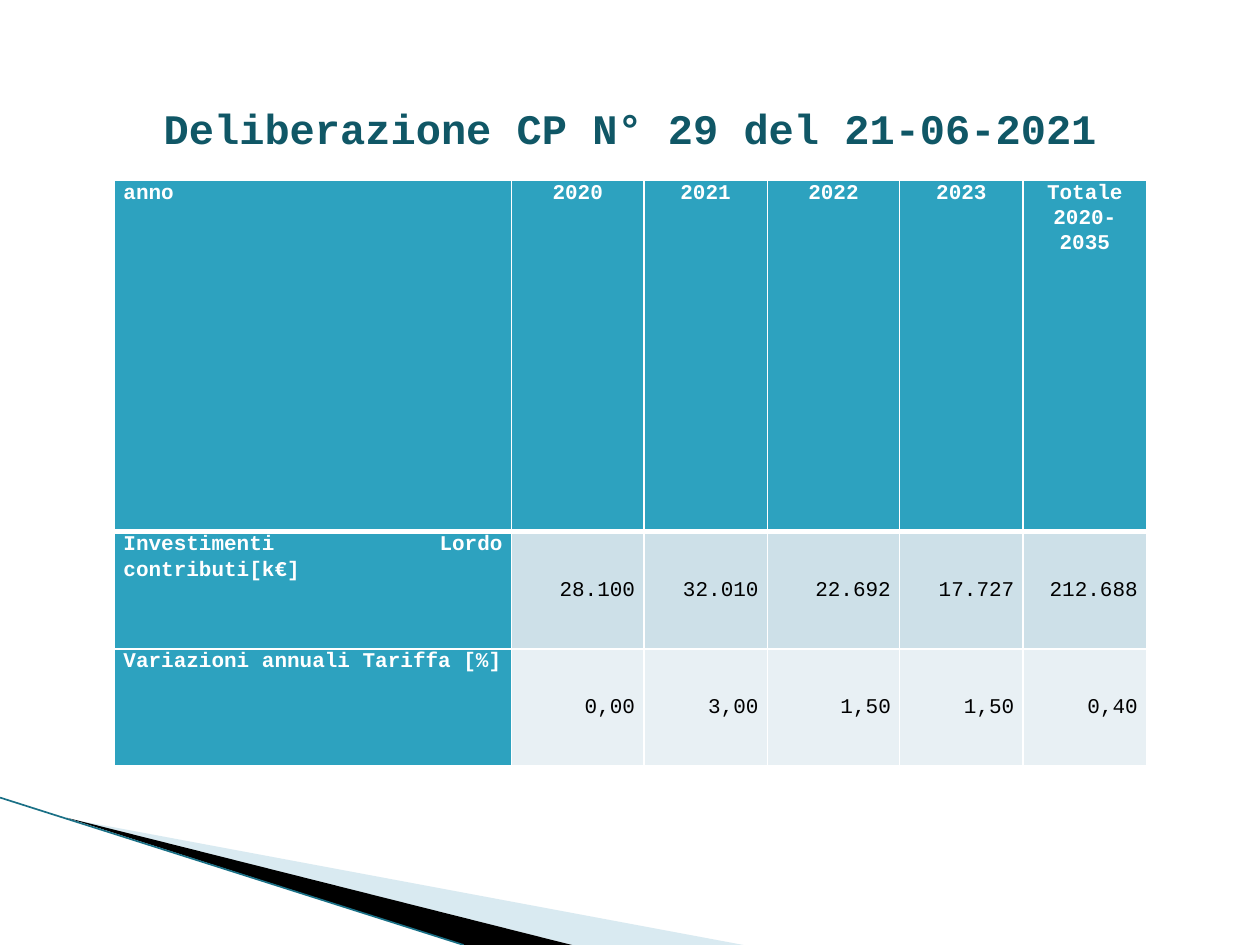
from lxml.etree import SubElement
from pptx import Presentation
from pptx.dml.color import RGBColor
from pptx.enum.shapes import MSO_CONNECTOR
from pptx.enum.text import MSO_ANCHOR as Anchor, PP_ALIGN as Align
from pptx.oxml.ns import qn
from pptx.util import Inches, Pt

FONT = "Courier New"
TITLE = "Deliberazione CP N° 29 del 21-06-2021"
TABLE_ROWS = [
    ("anno", "2020", "2021", "2022", "2023", "Totale 2020-2035"),
    ("Investimenti Lordo contributi[k€]", "28.100", "32.010", "22.692", "17.727", "212.688"),
    ("Variazioni annuali Tariffa [%]", "0,00", "3,00", "1,50", "1,50", "0,40"),
]
COLUMN_WIDTHS = (3.15, 1.05, 0.98, 1.05, 0.98, 0.98)
ROW_HEIGHTS = (2.79, 0.93, 0.93)
HEADING_FILL = "2DA2BF"
BAND_FILLS = ("CDE0E8", "E8F0F4")
WEDGES = [
    ([(0.55, 6.5), (5.9, 7.5), (4.54, 7.5)], "A0CBDC", 40),
    ([(0.53, 6.49), (4.54, 7.5), (3.68, 7.5)], "000000", 100),
]
EDGE = ((0, 6.33), (3.68, 7.5))
EDGE_COLOR = "1A7086"


def color(hex_code):
    return RGBColor.from_string(hex_code)


def paint(fill, hex_code):
    fill.solid()
    fill.fore_color.rgb = color(hex_code)


def write(paragraph, words, size, hex_code, bold, align):
    paragraph.alignment = align
    run = paragraph.add_run()
    run.text = words
    run.font.name = FONT
    run.font.size = Pt(size)
    run.font.bold = bold
    run.font.color.rgb = color(hex_code)


def add_borders(cell, widths):
    properties = cell._tc.get_or_add_tcPr()
    for side, width in zip("LRTB", widths):
        border = SubElement(properties, qn(f"a:ln{side}"), w=str(Pt(width)))
        solid = SubElement(border, qn("a:solidFill"))
        SubElement(solid, qn("a:srgbClr"), val="FFFFFF")


def add_wedge(slide, points, hex_code, opacity):
    corners = [(Inches(x), Inches(y)) for x, y in points]
    builder = slide.shapes.build_freeform(*corners[0])
    builder.add_line_segments(corners[1:], close=True)
    wedge = builder.convert_to_shape()
    wedge.shadow.inherit = False
    wedge.line.fill.background()
    paint(wedge.fill, hex_code)
    if opacity < 100:
        tint = wedge._element.spPr.find(f".//{qn('a:srgbClr')}")
        SubElement(tint, qn("a:alpha"), val=str(opacity * 1000))


def add_edge(slide):
    ends = [Inches(value) for point in EDGE for value in point]
    edge = slide.shapes.add_connector(MSO_CONNECTOR.STRAIGHT, *ends)
    edge.line.color.rgb = color(EDGE_COLOR)
    edge.line.width = Pt(0.95)
    SubElement(edge._element.spPr, qn("a:effectLst"))


def add_title(slide):
    title = slide.shapes.add_textbox(Inches(0.5), Inches(0.56), Inches(9), Inches(0.91)).text_frame
    title.word_wrap = True
    title.vertical_anchor = Anchor.MIDDLE
    write(title.paragraphs[0], TITLE, 24, "105766", True, Align.CENTER)


def fill_cell(cell, words, row, column):
    heading = row == 0 or column == 0
    if column == 0:
        align = Align.JUSTIFY
    else:
        align = Align.CENTER if row == 0 else Align.RIGHT
    cell.margin_left = cell.margin_right = Inches(0.07)
    cell.margin_top = cell.margin_bottom = 0
    cell.vertical_anchor = Anchor.TOP if heading else Anchor.MIDDLE
    add_borders(cell, (1, 1, 3 if row == 1 else 1, 3 if row == 0 else 1))
    paint(cell.fill, HEADING_FILL if heading else BAND_FILLS[row - 1])
    paragraph = cell.text_frame.paragraphs[0]
    paragraph.line_spacing = 1.07
    write(paragraph, words, 12, "FFFFFF" if heading else "000000", heading, align)


def add_tariff_table(slide):
    table = slide.shapes.add_table(
        len(TABLE_ROWS), len(COLUMN_WIDTHS), Inches(0.91), Inches(1.43),
        Inches(sum(COLUMN_WIDTHS)), Inches(sum(ROW_HEIGHTS))).table
    for column, width in zip(table.columns, COLUMN_WIDTHS):
        column.width = Inches(width)
    for row, height in zip(table.rows, ROW_HEIGHTS):
        row.height = Inches(height)
    for r, values in enumerate(TABLE_ROWS):
        for c, words in enumerate(values):
            fill_cell(table.cell(r, c), words, r, c)


def main():
    deck = Presentation()
    deck.slide_width, deck.slide_height = Inches(10), Inches(7.5)
    slide = deck.slides.add_slide(deck.slide_layouts[6])
    for wedge in WEDGES:
        add_wedge(slide, *wedge)
    add_edge(slide)
    add_title(slide)
    add_tariff_table(slide)
    deck.save("out.pptx")


if __name__ == "__main__":
    main()
